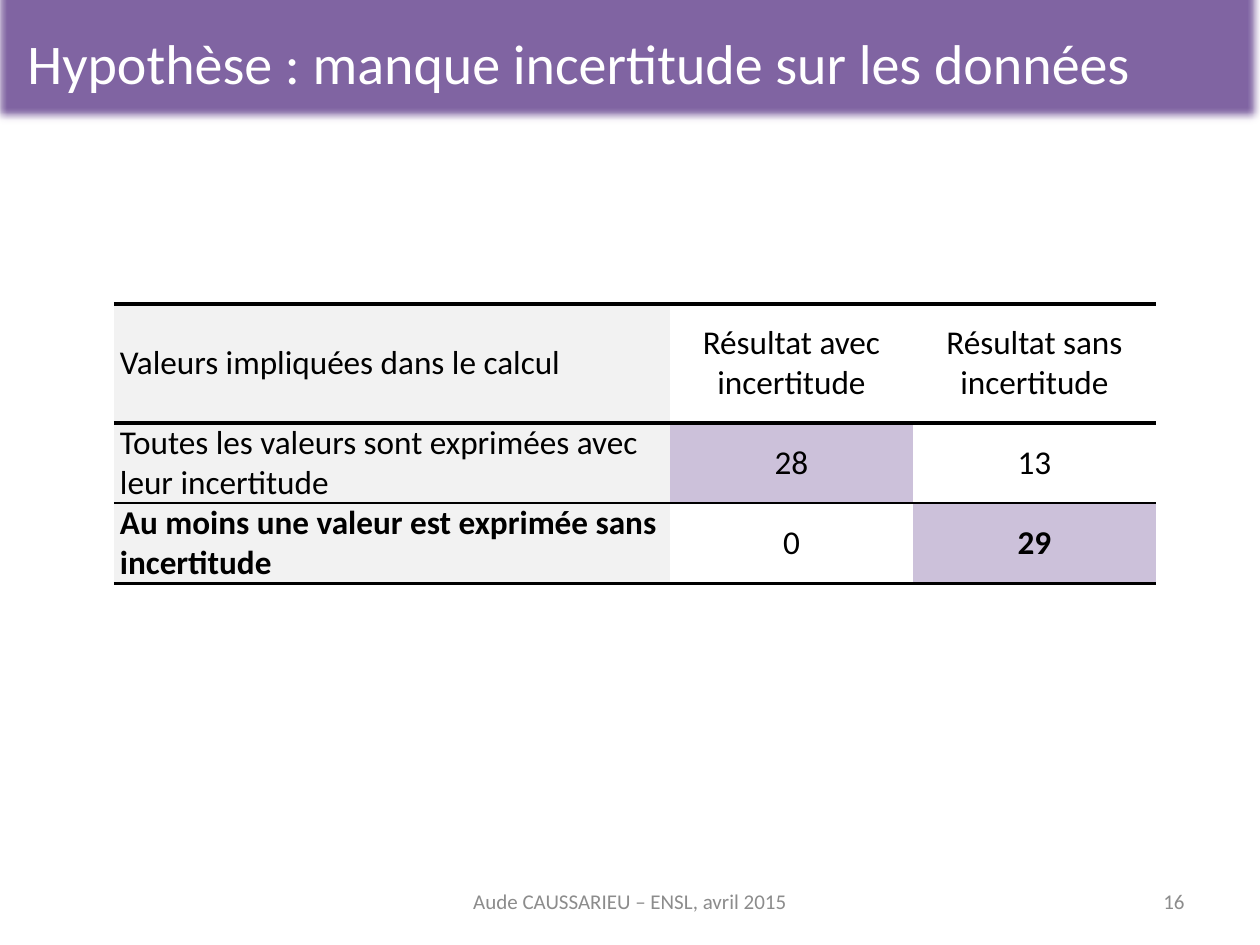
from lxml import etree
from pptx import Presentation
from pptx.dml.color import RGBColor
from pptx.enum.shapes import MSO_SHAPE
from pptx.enum.text import MSO_ANCHOR, PP_ALIGN
from pptx.oxml.ns import qn
from pptx.util import Emu, Pt

RECT = MSO_SHAPE.RECTANGLE
MIDDLE = MSO_ANCHOR.MIDDLE
LEFT, CENTER, RIGHT = PP_ALIGN.LEFT, PP_ALIGN.CENTER, PP_ALIGN.RIGHT
FONT = "Calibri"
PURPLE, LILAC, PALE = "8064A2", "CCC1DA", "F2F2F2"
WHITE, BLACK, GREY = "FFFFFF", "000000", "8C8C8C"
SCALE = 914400 / 126
COLS, ROWS = (556, 243, 243), (119, 80, 81)
RULES = (2, 2.25, 1, 2)
CELLS = (
    ("Valeurs impliquées dans le calcul", "Résultat avec incertitude", "Résultat sans incertitude"),
    ("Toutes les valeurs sont exprimées avec leur incertitude", "28", "13"),
    ("Au moins une valeur est exprimée sans incertitude", "0", "29"),
)
HIGHLIGHTS = {(1, 1), (2, 2)}
BOLD = {(2, 0), (2, 2)}


def px(n):
    """Turn px into EMU."""
    return Emu(round(n * SCALE))


def rgb(color):
    """Turn a hex string into a colour."""
    return RGBColor.from_string(color)


def write(tf, text, size=19, color=BLACK, bold=False, align=LEFT):
    """Write one formatted paragraph into a text frame."""
    tf.word_wrap = True
    p = tf.paragraphs[0]
    p.alignment = align
    r = p.add_run()
    r.text = text
    r.font.name = FONT
    r.font.size = Pt(size)
    r.font.bold = bold
    r.font.color.rgb = rgb(color)


def add_text(s, x, y, w, h, text, **fmt):
    """Add a vertically centred text box."""
    tf = s.shapes.add_textbox(px(x), px(y), px(w), px(h)).text_frame
    tf.vertical_anchor = MIDDLE
    write(tf, text, **fmt)


def add_header(s, x, y, w, h):
    """Add the soft-edged title band and its title."""
    sp = s.shapes.add_shape(RECT, px(x - 10), px(y - 43), px(w + 15), px(h + 43))
    sp.shadow.inherit = False
    sp.fill.solid()
    sp.fill.fore_color.rgb = rgb(PURPLE)
    sp.line.fill.background()
    effects = sp._element.spPr.find(qn("a:effectLst"))
    etree.SubElement(effects, qn("a:softEdge"), rad="63500")
    add_text(s, x + 15, y, w - 30, h - 1, "Hypothèse : manque incertitude sur les données",
             size=32, color=WHITE)


def set_borders(cell, top, bottom):
    """Draw horizontal rules of the given point widths and no side borders."""
    tc_pr = cell._tc.get_or_add_tcPr()
    for i, (tag, width) in enumerate((("lnL", 0), ("lnR", 0), ("lnT", top), ("lnB", bottom))):
        ln = etree.Element(qn(f"a:{tag}"), w=str(Pt(width)))
        if width:
            fill = etree.SubElement(ln, qn("a:solidFill"))
            etree.SubElement(fill, qn("a:srgbClr"), val=BLACK)
        else:
            etree.SubElement(ln, qn("a:noFill"))
        tc_pr.insert(i, ln)


def add_results(s, x, y):
    """Add the table of results."""
    frame = s.shapes.add_table(len(ROWS), len(COLS), px(x), px(y), px(sum(COLS)), px(sum(ROWS)))
    table = frame.table
    table.first_row = table.horz_banding = False
    for column, width in zip(table.columns, COLS):
        column.width = px(width)
    for i, (row, height) in enumerate(zip(table.rows, ROWS)):
        row.height = px(height)
        for j, cell in enumerate(row.cells):
            cell.vertical_anchor = MIDDLE
            cell.margin_left = cell.margin_right = px(6)
            cell.margin_top = cell.margin_bottom = 0
            cell.fill.solid()
            plain = WHITE if j else PALE
            cell.fill.fore_color.rgb = rgb(LILAC if (i, j) in HIGHLIGHTS else plain)
            set_borders(cell, RULES[i], RULES[i + 1])
            write(cell.text_frame, CELLS[i][j], bold=(i, j) in BOLD, align=CENTER if j else LEFT)


def add_footer(s, x, y, w, h):
    """Add the centred credit and the page number at the right."""
    add_text(s, x + (w - 400) // 2, y, 400, h, "Aude CAUSSARIEU – ENSL, avril 2015",
             size=12, color=GREY, align=CENTER)
    add_text(s, x + w - 357, y, 294, h, "16", size=12, color=GREY, align=RIGHT)


def main():
    """Build and save the slide."""
    prs = Presentation()
    prs.slide_width, prs.slide_height = px(1260), px(945)
    s = prs.slides.add_slide(prs.slide_layouts[6])
    add_header(s, 0, 0, 1260, 126)
    add_results(s, 114, 304)
    add_footer(s, 0, 876, 1260, 50)
    prs.save("out.pptx")


if __name__ == "__main__":
    main()
